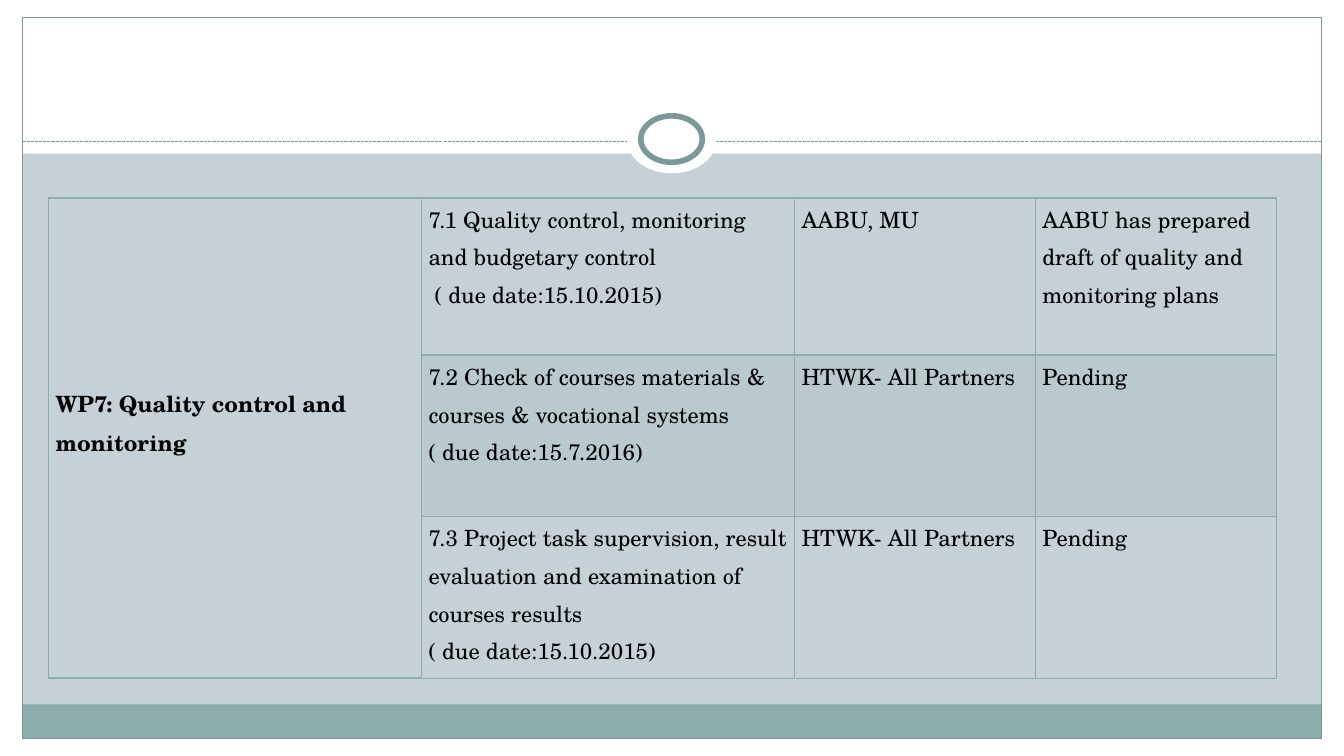
import pptx
import pptx.util
import pptx.oxml
import pptx.oxml.ns
import pptx.dml.color
import pptx.enum.dml
import pptx.enum.shapes
import pptx.enum.text

Cm, Pt = pptx.util.Cm, pptx.util.Pt
SHAPE = pptx.enum.shapes.MSO_SHAPE
WHITE, TEAL, EDGE = "FFFFFF", "8CADAE", "7C999A"


def rgb(code):
    return pptx.dml.color.RGBColor.from_string(code)


def draw(kind, left, top, width, height, fill=None, line=0):
    shape = slide.shapes.add_shape(kind, Cm(left), Cm(top), Cm(width), Cm(height))
    shape.shadow.inherit = False
    if fill:
        shape.fill.solid()
        shape.fill.fore_color.rgb = rgb(fill)
    else:
        shape.fill.background()
    if line:
        shape.line.color.rgb = rgb(EDGE)
        shape.line.width = Pt(line)
    else:
        shape.line.fill.background()


deck = pptx.Presentation()
deck.slide_width, deck.slide_height = Cm(33.87), Cm(19.05)
slide = deck.slides.add_slide(deck.slide_layouts[6])
slide.background.fill.solid()
slide.background.fill.fore_color.rgb = rgb("C5D1D7")

# White margins, header band, footer band and frame
draw(SHAPE.RECTANGLE, 0, 18.62, 33.87, 0.43, WHITE)
draw(SHAPE.RECTANGLE, 0, 0, 33.87, 3.87, WHITE)
for left in (0, 33.3):
    draw(SHAPE.RECTANGLE, left, 0, 0.57, 19.05, WHITE)
draw(SHAPE.RECTANGLE, 0.57, 17.75, 32.73, 0.87, TEAL)
draw(SHAPE.RECTANGLE, 0.57, 0.43, 32.73, 18.19, line=0.75)

# Dashed rule with the ring on it
rule = slide.shapes.add_connector(
    pptx.enum.shapes.MSO_CONNECTOR.STRAIGHT, Cm(0.57), Cm(3.56), Cm(33.28), Cm(3.56))
rule.line.color.rgb = rgb(EDGE)
rule.line.width = Pt(0.75)
rule.line.dash_style = pptx.enum.dml.MSO_LINE.SQUARE_DOT
rule._element.spPr.append(pptx.oxml.parse_xml(
    f"<a:effectLst {pptx.oxml.ns.nsdecls('a')}/>"))
draw(SHAPE.OVAL, 15.8, 2.67, 2.26, 1.7, WHITE)
draw(SHAPE.OVAL, 16.15, 2.92, 1.55, 1.17, WHITE, 4)

# Work package table: package, task, partners, status
rows = [
    ["WP7: Quality control and monitoring",
     "7.1 Quality control, monitoring and budgetary control\n ( due date:15.10.2015)",
     "AABU, MU",
     "AABU has prepared draft of quality and monitoring plans"],
    ["",
     "7.2 Check of courses materials & courses & vocational systems\n"
     "( due date:15.7.2016)",
     "HTWK- All Partners", "Pending"],
    ["",
     "7.3 Project task supervision, result evaluation and examination of courses results\n"
     "( due date:15.10.2015)",
     "HTWK- All Partners", "Pending"],
]
table = slide.shapes.add_table(3, 4, Cm(1.22), Cm(4.99), Cm(30.94), Cm(12.1)).table
table.first_row = table.horz_banding = False
for col, width in zip(table.columns, (9.4, 9.4, 6.07, 6.07)):
    col.width = Cm(width)
for row, height in zip(table.rows, (3.96, 4.07, 4.07)):
    row.height = Cm(height)

for r, texts in enumerate(rows):
    for c, text in enumerate(texts):
        cell = table.cell(r, c)
        cell.margin_left = cell.margin_right = Cm(0.18)
        cell.margin_top = cell.margin_bottom = 0
        cell.text = text
        for para in cell.text_frame.paragraphs:
            para.line_spacing = 1.15
            para.space_after = Pt(10 if c > 1 else 0)
            para.font.name = "TeX Gyre Schola"
            para.font.size = Pt(16)
            para.font.bold = c == 0
            para.font.color.rgb = rgb("000000")

        # Translucent band on the middle row
        props = cell._tc.get_or_add_tcPr()
        if r == 1 and c:
            cell.fill.solid()
            cell.fill.fore_color.rgb = rgb(TEAL)
            tint = props.find(".//" + pptx.oxml.ns.qn("a:srgbClr"))
            tint.append(pptx.oxml.parse_xml(
                f"<a:alpha {pptx.oxml.ns.nsdecls('a')} val='20000'/>"))
        else:
            cell.fill.background()

        # Borders, thicker under the first row
        sides = {"L": 1, "R": 1, "T": 2 if r == 1 and c else 1,
                 "B": 2 if r == 0 else 1}
        for spot, (side, width) in enumerate(sides.items()):
            props.insert(spot, pptx.oxml.parse_xml(
                f"<a:ln{side} {pptx.oxml.ns.nsdecls('a')} w='{Pt(width)}'>"
                f"<a:solidFill><a:srgbClr val='{TEAL}'/></a:solidFill></a:ln{side}>"))

# Package name spans all tasks, set a little above the middle
head = table.cell(0, 0)
head.merge(table.cell(2, 0))
head.vertical_anchor = pptx.enum.text.MSO_ANCHOR.MIDDLE
head.margin_bottom = Cm(0.9)

deck.save("out.pptx")
